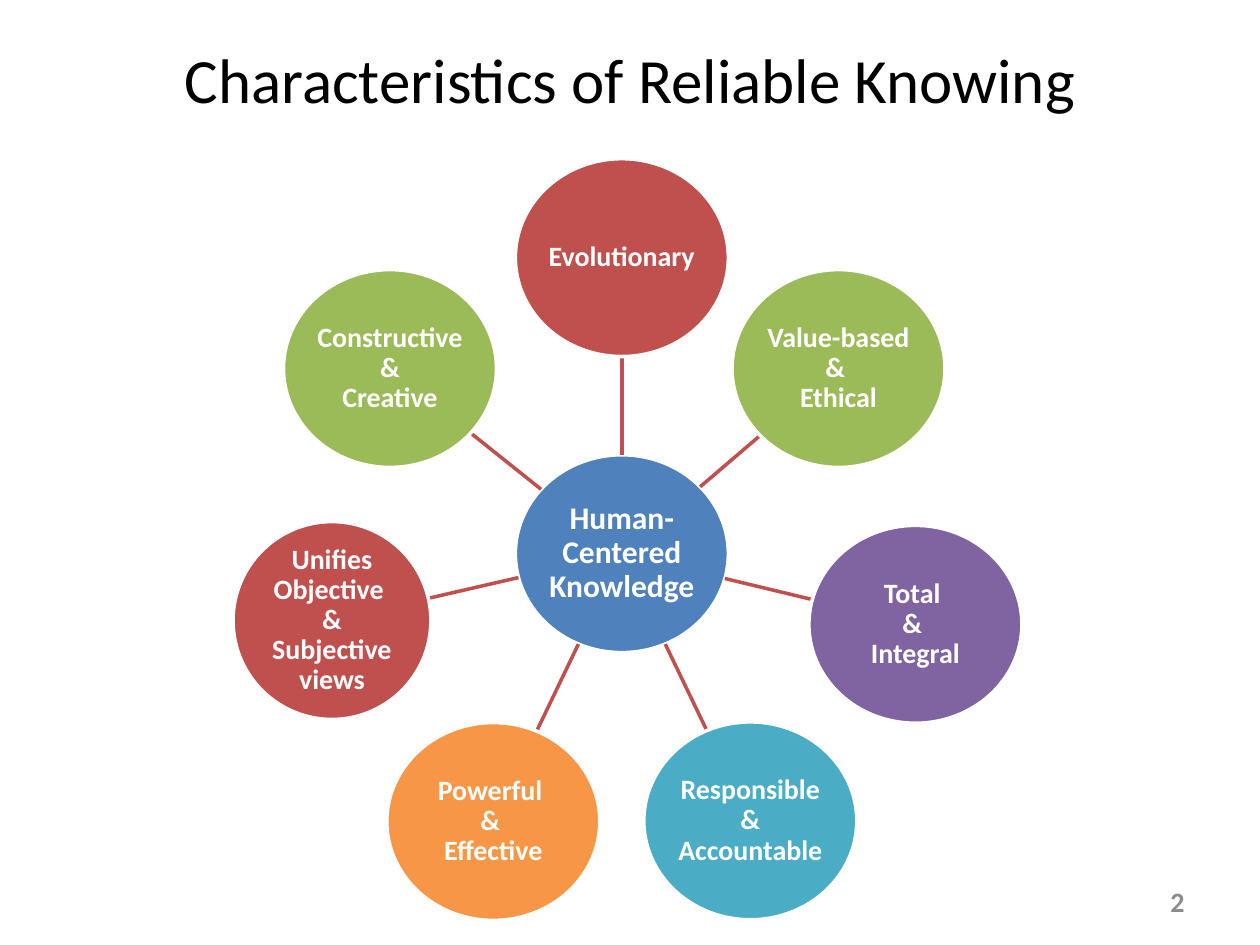
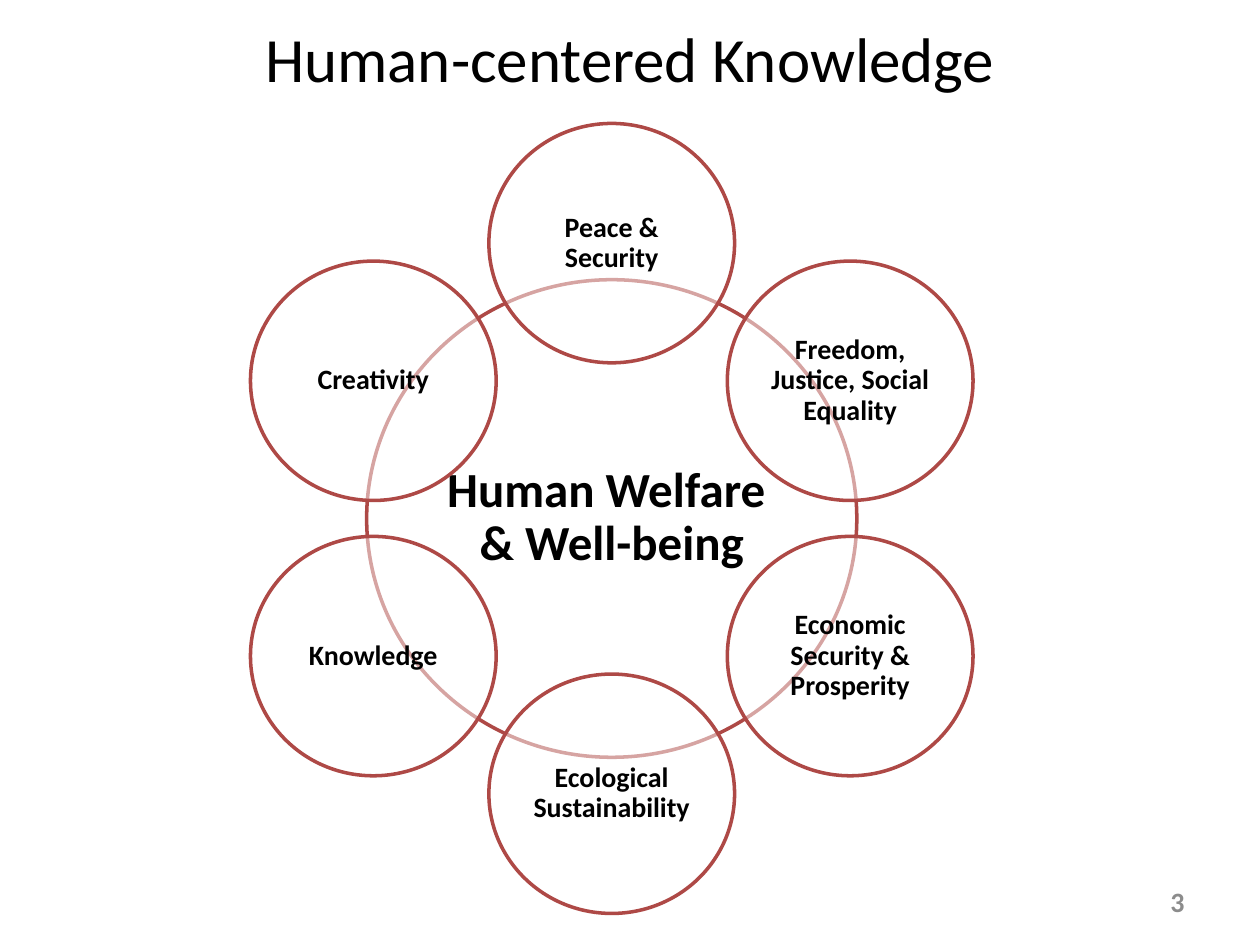
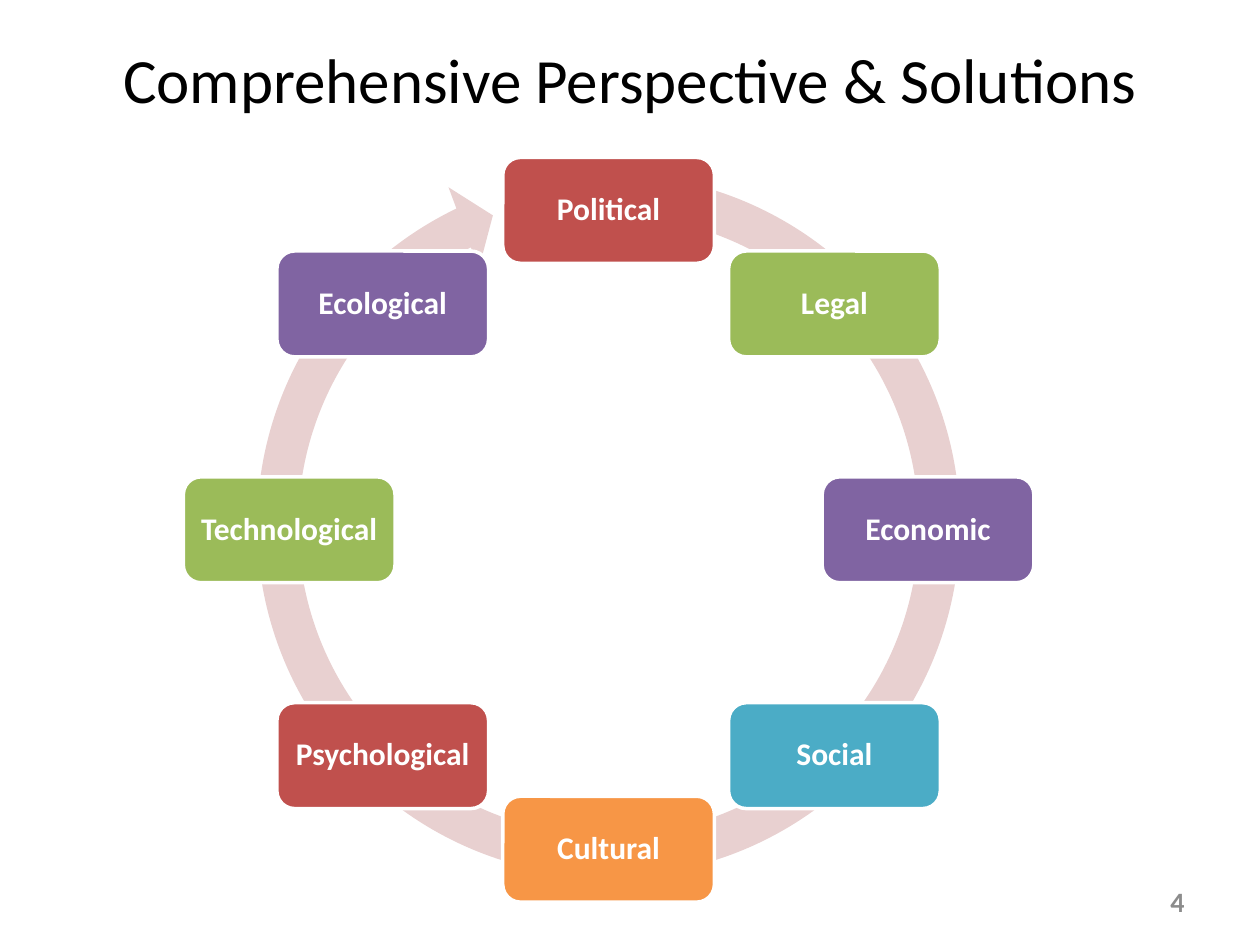
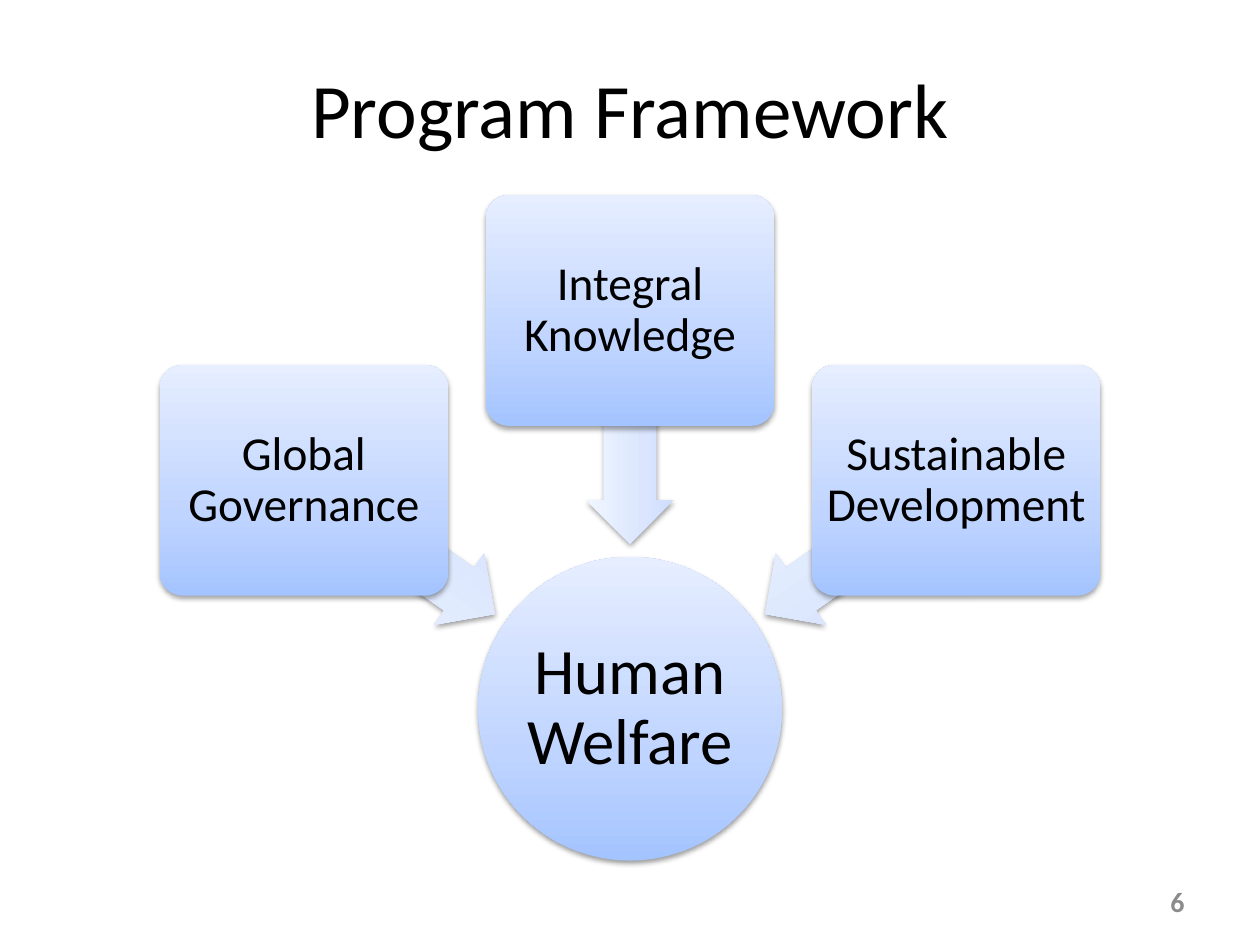
import math
from dataclasses import dataclass

import lxml.etree
import pptx
import pptx.dml.color
import pptx.enum.shapes
import pptx.enum.text
import pptx.oxml
import pptx.oxml.ns
import pptx.util


@dataclass(frozen=True)
class Theme:
    font: str = "Calibri"
    black: str = "000000"
    white: str = "FFFFFF"
    gray: str = "8C8C8C"
    blue: str = "4F81BD"
    red: str = "C0504D"
    green: str = "9BBB59"
    purple: str = "8064A2"
    teal: str = "4BACC6"
    orange: str = "F79646"
    outline: str = "AE4946"
    pale_red: str = "E8D0D0"
    box_gradient: tuple = ((0, "A4C4FF"), (35, "BFD4FF"), (100, "E6EEFF"))
    arrow_gradient: tuple = ((0, "CDDDFE"), (35, "DBE6FE"), (100, "F0F5FF"))
    title: int = 36
    big_title: int = 44
    label: int = 16
    strong: int = 18
    center: int = 28
    box: int = 27
    goal: int = 37
    line: int = 2


T = Theme()
SHAPE = pptx.enum.shapes.MSO_SHAPE
ALIGN = pptx.enum.text.PP_ALIGN
RGB = pptx.dml.color.RGBColor.from_string
qn = pptx.oxml.ns.qn

prs = pptx.Presentation()
prs.slide_width = pptx.util.Inches(10)
prs.slide_height = pptx.util.Inches(7.5)

# Grid: 100 columns by 75 rows
COL = prs.slide_width / 100
ROW = prs.slide_height / 75


def ring_point(center, radius, degrees):
    """Point on a circle, clockwise from the top, in grid units."""
    a = math.radians(degrees)
    return center[0] + radius * math.sin(a), center[1] - radius * math.cos(a)


def add_node(slide, kind, center, size, text="", pt=T.label, color=T.white, bold=True,
             fill=None, line=None, inset=0.01, align=ALIGN.CENTER):
    """Shape (or text box when kind is None) centred on a grid point, with its text."""
    (x, y), (w, h) = center, size
    frame = [int(v) for v in ((x - w / 2) * COL, (y - h / 2) * ROW, w * COL, h * ROW)]
    if kind is None:
        sp = slide.shapes.add_textbox(*frame)
    else:
        sp = slide.shapes.add_shape(kind, *frame)
        sp.shadow.inherit = False
        if line:
            sp.line.color.rgb = RGB(line)
            sp.line.width = pptx.util.Pt(T.line)
        else:
            sp.line.fill.background()
        if isinstance(fill, tuple):
            stops = "".join(f'<a:gs pos="{pos * 1000}"><a:srgbClr val="{c}"/></a:gs>' for pos, c in fill)
            sp.fill.gradient()
            grad = sp._element.spPr.find(qn("a:gradFill"))
            grad.getparent().replace(grad, pptx.oxml.parse_xml(
                f'<a:gradFill {pptx.oxml.ns.nsdecls("a")} rotWithShape="1"><a:gsLst>{stops}</a:gsLst>'
                '<a:lin ang="16200000" scaled="0"/></a:gradFill>'))
            sp._element.spPr.find(qn("a:effectLst")).append(pptx.oxml.parse_xml(
                f'<a:outerShdw {pptx.oxml.ns.nsdecls("a")} blurRad="40000" dist="20000" dir="5400000" '
                'rotWithShape="0"><a:srgbClr val="000000"><a:alpha val="38000"/></a:srgbClr></a:outerShdw>'))
        else:
            sp.fill.solid()
            sp.fill.fore_color.rgb = RGB(fill)
    if text:
        tf = sp.text_frame
        tf.word_wrap = True
        tf.vertical_anchor = pptx.enum.text.MSO_ANCHOR.MIDDLE
        p = tf.paragraphs[0]
        p.text = text
        p.alignment = align
        if kind is not None:
            p.line_spacing = 0.9
            tf.margin_left = tf.margin_right = pptx.util.Inches(inset)
            tf.margin_top = tf.margin_bottom = pptx.util.Inches(inset)
        for r in p.runs:
            r.font.name = T.font
            r.font.size = pptx.util.Pt(pt)
            r.font.bold = bold
            r.font.color.rgb = RGB(color)
    return sp


# Slides with title and number: title, middle row, size, number
slides = []
for title, row, pt, number in (
    ("Characteristics of Reliable Knowing", 6.25, T.title, "2"),
    ("Human-centered Knowledge", 4.55, T.title, "3"),
    ("Comprehensive Perspective & Solutions", 6.25, T.title, "4"),
    ("Program Framework", 8.55, T.big_title, "6"),
):
    slide = prs.slides.add_slide(prs.slide_layouts[6])
    add_node(slide, None, (50, row), (90, 12.5), title, pt, T.black, bold=False)
    add_node(slide, None, (83.35, 71.5), (23.3, 4), number, color=T.gray, align=ALIGN.RIGHT)
    slides.append(slide)
traits_slide, welfare_slide, cycle_slide, program_slide = slides

# Slide 1: hub with spokes that run from edge to edge of the ellipses
hub, oval = (49.35, 43.95), (16.9, 15.7)
add_node(traits_slide, SHAPE.OVAL, hub, oval, "Human- Centered Knowledge", T.strong,
         fill=T.blue, line=T.white)
for text, center, width, color in (
    ("Evolutionary", (49.35, 20.45), 16.9, T.red),
    ("Value-based & \nEthical", (66.55, 29.25), 16.9, T.green),
    ("Total \n& \nIntegral", (72.65, 49.55), 16.9, T.purple),
    ("Responsible & Accountable", (59.55, 65.15), 16.9, T.teal),
    ("Powerful \n& \nEffective", (39.15, 65.2), 16.9, T.orange),
    ("Unifies Objective \n& Subjective views", (26.35, 49.25), 15.7, T.red),
    ("Constructive\n & \nCreative", (30.95, 29.25), 16.9, T.green),
):
    dx, dy = center[0] - hub[0], center[1] - hub[1]
    start, stop = (0.5 / math.hypot(dx / w, dy / oval[1]) for w in (oval[0], width))
    ends = [int(v) for t in (start, 1 - stop)
            for v in ((hub[0] + t * dx) * COL, (hub[1] + t * dy) * ROW)]
    spoke = traits_slide.shapes.add_connector(pptx.enum.shapes.MSO_CONNECTOR.STRAIGHT, *ends)
    spoke.line.color.rgb = RGB(T.red)
    spoke.line.width = pptx.util.Pt(T.line)
    lxml.etree.SubElement(spoke._element.spPr, qn("a:effectLst"))
    add_node(traits_slide, SHAPE.OVAL, center, (width, oval[1]), text, fill=color, line=T.white)

# Slide 2: six translucent circles around a large one
middle = (48.55, 41.15)
circles = [("Human Welfare \n& Well-being", middle, (38.9, 37.9), T.center)]
for i, text in enumerate((
    "Peace & Security", "Freedom, Justice, Social Equality", "Economic Security & Prosperity",
    "Ecological Sustainability", "Knowledge", "Creativity",
)):
    circles.append((text, ring_point(middle, 21.85, i * 60), (19.5, 19), T.label))
for text, center, size, pt in circles:
    sp = add_node(welfare_slide, SHAPE.OVAL, center, size, text, pt, T.black,
                  fill=T.white, line=T.outline, inset=0.02)
    tint = sp._element.spPr.find(qn("a:solidFill"))[0]
    lxml.etree.SubElement(tint, qn("a:alpha")).set("val", "50000")

# Slide 3: eight boxes on a circular arrow
arrow = add_node(cycle_slide, SHAPE.CIRCULAR_ARROW, (48.3, 41.7), (59.4, 59.4), fill=T.pale_red)
for i, value in enumerate((0.055, 3.307, 146.42, 168.783, 0.058)):
    arrow.adjustments[i] = value
for i, (text, color) in enumerate((
    ("Political", T.red), ("Legal", T.green), ("Economic", T.purple), ("Social", T.teal),
    ("Cultural", T.orange), ("Psychological", T.red), ("Technological", T.green),
    ("Ecological", T.purple),
)):
    add_node(cycle_slide, SHAPE.ROUNDED_RECTANGLE, ring_point((48.3, 42.05), 25.35, i * 45),
             (16.8, 8.4), text, T.strong, fill=color, line=T.white, inset=0.07)

# Slide 4: three boxes pointing at the goal
goal = (50, 56.25)
add_node(program_slide, SHAPE.OVAL, goal, (24.1, 24.1), "Human Welfare", T.goal, T.black,
         bold=False, fill=T.box_gradient, inset=0.03)
for text, angle in (("Global Governance", -55), ("Integral Knowledge", 0),
                    ("Sustainable Development", 55)):
    arrow = add_node(program_slide, SHAPE.LEFT_ARROW, ring_point(goal, 22.35, angle),
                     (18.5, 6.9), fill=T.arrow_gradient)
    arrow.rotation = 270 + angle
    arrow.adjustments[0] = 0.6
    arrow.adjustments[1] = 0.5
    box = add_node(program_slide, SHAPE.ROUNDED_RECTANGLE, ring_point(goal, 31.6, angle),
                   (22.9, 18.3), text, T.box, T.black, bold=False,
                   fill=T.box_gradient, inset=0.05)
    box.adjustments[0] = 0.1

prs.save("out.pptx")
